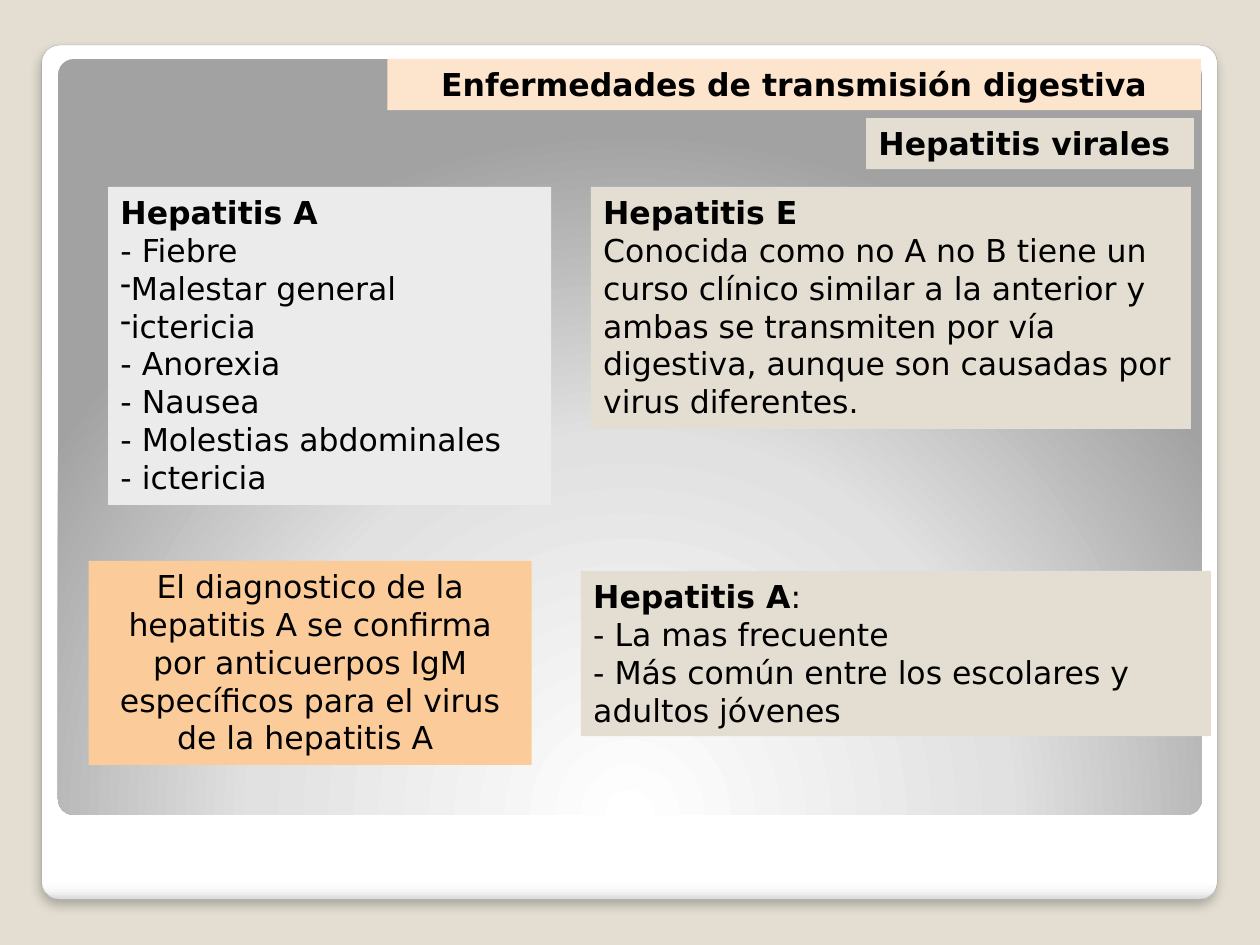
from lxml import etree
from pptx import Presentation
from pptx.dml.color import RGBColor
from pptx.enum.shapes import MSO_SHAPE as Preset
from pptx.enum.text import MSO_ANCHOR as Anchor, MSO_AUTO_SIZE as AutoSize, PP_ALIGN as Align
from pptx.oxml import parse_xml
from pptx.oxml.ns import nsdecls, qn
from pptx.util import Cm, Pt

FONT = "DejaVu Sans"
BLACK = RGBColor(0x00, 0x00, 0x00)
SAND = RGBColor(0xE3, 0xDE, 0xD1)
PEACH = RGBColor(0xFD, 0xE5, 0xCD)
ORANGE = RGBColor(0xFB, 0xCC, 0x9A)
PALE = RGBColor(0xEB, 0xEB, 0xEB)
EDGE = RGBColor(0xA4, 0xA4, 0xA4)
WHITE = RGBColor(0xFF, 0xFF, 0xFF)
CARD_STOPS = [(0, WHITE), (98, WHITE), (99, RGBColor(0xF7, 0xF7, 0xF7)), (100, RGBColor(0xDA, 0xDA, 0xDA))]
PANEL_STOPS = [(0, WHITE), (55, RGBColor(0xE1, 0xE1, 0xE1)), (100, RGBColor(0xA2, 0xA2, 0xA2))]
DOWNWARD = '<a:lin ang="5400000" scaled="0"/>'
FROM_BELOW = '<a:path path="circle"><a:fillToRect l="50000" t="175000" r="50000" b="-75000"/></a:path>'


def add_block(slide, preset, box):
    """Add a preset shape without line or shadow at a box in centimetres."""
    block = slide.shapes.add_shape(preset, *(Cm(length) for length in box))
    block.shadow.inherit = False
    block.line.fill.background()
    return block


def add_rounded(slide, box, stops, direction):
    """Add a slightly rounded rectangle filled with a gradient."""
    rounded = add_block(slide, Preset.ROUNDED_RECTANGLE, box)
    rounded.adjustments[0] = 0.021
    stop_xml = "".join(
        f'<a:gs pos="{position * 1000}"><a:srgbClr val="{color}"/></a:gs>' for position, color in stops
    )
    gradient = parse_xml(
        f'<a:gradFill {nsdecls("a")} rotWithShape="1"><a:gsLst>{stop_xml}</a:gsLst>{direction}</a:gradFill>'
    )
    rounded.element.spPr.find(qn("a:prstGeom")).addnext(gradient)
    return rounded


def add_frame(slide, box):
    """Draw the white card and the grey panel inside it."""
    left, top, width, height = box
    card = add_rounded(slide, box, CARD_STOPS, DOWNWARD)
    card.line.color.rgb = EDGE
    card.line.width = Pt(0.16)
    shadow = etree.SubElement(
        card.element.spPr.find(qn("a:effectLst")), qn("a:outerShdw"),
        blurRad=str(Pt(6)), dist=str(Pt(4)), dir="5400000", algn="t", rotWithShape="0",
    )
    shade = etree.SubElement(shadow, qn("a:srgbClr"), val=str(BLACK))
    etree.SubElement(shade, qn("a:alpha"), val="25000")
    panel_box = (left + 0.33, top + 0.28, width - 0.64, height - 1.98)
    add_rounded(slide, panel_box, PANEL_STOPS, FROM_BELOW)


def add_note(slide, box, fill, heading="", lines=(), suffix="", dashed=(), align=Align.LEFT):
    """Write a bold heading and plain lines in a filled box."""
    note = add_block(slide, Preset.RECTANGLE, box)
    note.fill.solid()
    note.fill.fore_color.rgb = fill
    frame = note.text_frame
    frame.word_wrap = True
    frame.auto_size = AutoSize.SHAPE_TO_FIT_TEXT
    frame.vertical_anchor = Anchor.TOP
    paragraphs = [[(heading, True), (suffix, False)]] if heading else []
    paragraphs += [[(line, False)] for line in lines]
    for index, runs in enumerate(paragraphs):
        paragraph = frame.add_paragraph() if index else frame.paragraphs[0]
        paragraph.alignment = align
        for text, bold in runs:
            if text:
                run = paragraph.add_run()
                run.text = text
                run.font.name = FONT
                run.font.size = Pt(18)
                run.font.bold = bold
                run.font.color.rgb = BLACK
        if runs[0][0] in dashed:
            etree.SubElement(paragraph._p.get_or_add_pPr(), qn("a:buChar"), char="-")


def main():
    """Build the slide on digestive transmission and save it."""
    deck = Presentation()
    deck.slide_width, deck.slide_height = Cm(25.4), Cm(19.05)
    slide = deck.slides.add_slide(deck.slide_layouts[6])
    slide.background.fill.solid()
    slide.background.fill.fore_color.rgb = SAND

    add_frame(slide, (0.84, 0.91, 23.7, 17.22))
    add_note(slide, (7.81, 1.19, 16.4, 1.03), PEACH, "Enfermedades de transmisión digestiva", align=Align.CENTER)
    symptoms = ["- Fiebre", "Malestar general", "ictericia", "- Anorexia", "- Nausea",
                "- Molestias abdominales", "- ictericia"]
    add_note(slide, (2.18, 3.77, 8.93, 6.41), PALE, "Hepatitis A", symptoms,
             dashed=("Malestar general", "ictericia"))
    diagnosis = ("El diagnostico de la hepatitis A se confirma por anticuerpos IgM "
                 "específicos para el virus de la hepatitis A ")
    add_note(slide, (1.79, 11.31, 8.93, 4.11), ORANGE, lines=[diagnosis], align=Align.CENTER)
    course = ("Conocida como no A no B tiene un curso clínico similar a la anterior y ambas "
              "se transmiten por vía digestiva, aunque son causadas por virus diferentes.")
    add_note(slide, (11.91, 3.77, 12.1, 4.88), SAND, "Hepatitis E", [course])
    frequency = ["- La mas frecuente", "- Más común entre los escolares y adultos jóvenes"]
    add_note(slide, (11.71, 11.51, 12.7, 3.33), SAND, "Hepatitis A", frequency, suffix=":")
    add_note(slide, (17.46, 2.38, 6.61, 1.03), SAND, "Hepatitis virales")
    deck.save("out.pptx")


if __name__ == "__main__":
    main()
